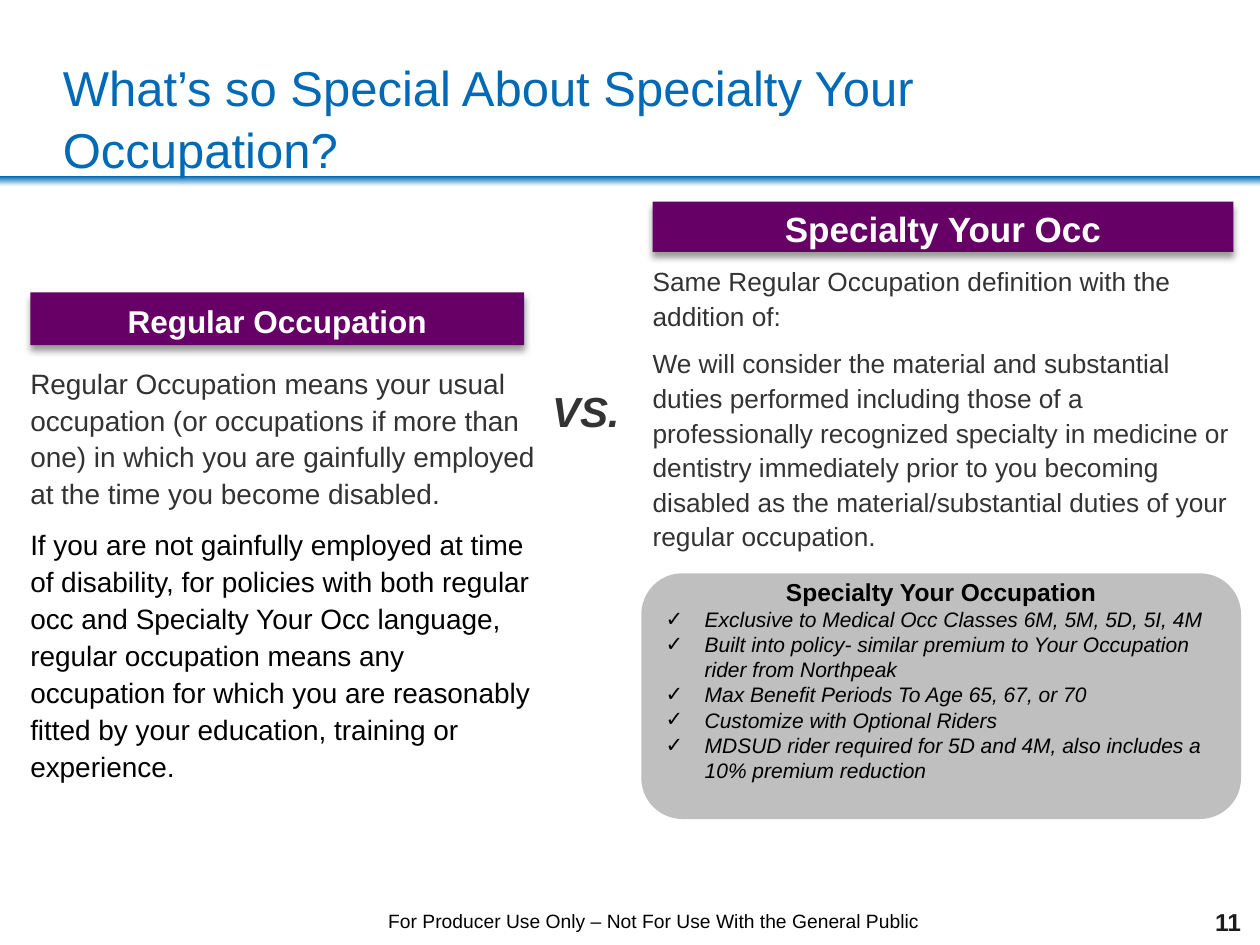
from lxml.etree import SubElement
from pptx import Presentation
from pptx.dml.color import RGBColor
from pptx.enum.shapes import MSO_SHAPE as Preset
from pptx.enum.text import MSO_ANCHOR as Anchor, PP_ALIGN as Align
from pptx.oxml.ns import qn
from pptx.util import Inches, Pt

BLUE = RGBColor(0x00, 0x6A, 0xB6)
PALE_BLUE = RGBColor(0xE7, 0xF1, 0xF8)
PURPLE = RGBColor(0x66, 0x00, 0x66)
GRAY = RGBColor(0xBF, 0xBF, 0xBF)
DARK_GRAY = RGBColor(0x33, 0x33, 0x33)
NEAR_BLACK = RGBColor(0x1C, 0x1C, 0x1C)
BLACK = RGBColor(0x00, 0x00, 0x00)
WHITE = RGBColor(0xFF, 0xFF, 0xFF)


class SlideBuilder:
    font = "Arial"
    body_spacing = 1.1

    def __init__(self, page):
        self.page = page

    def style(self, para, size, color, bold=False, italic=False,
              align=Align.LEFT, spacing=None):
        para.alignment = align
        if spacing:
            para.line_spacing = spacing
        for span in para.runs:
            font = span.font
            font.name, font.size = self.font, Pt(size)
            font.bold, font.italic = bold, italic
            font.color.rgb = color

    def frame(self, shape, anchor=Anchor.TOP, inset=0.0):
        frame = shape.text_frame
        frame.word_wrap = True
        frame.vertical_anchor = anchor
        frame.margin_left = frame.margin_right = Inches(inset)
        frame.margin_top = frame.margin_bottom = Inches(inset / 2)
        return frame

    def shape(self, preset, area):
        shape = self.page.shapes.add_shape(preset, *map(Inches, area))
        shape.shadow.inherit = False
        shape.line.fill.background()
        return shape

    def text(self, area, words, size, color, anchor=Anchor.TOP, inset=0.0, **look):
        box = self.page.shapes.add_textbox(*map(Inches, area))
        frame = self.frame(box, anchor, inset)
        frame.text = words
        self.style(frame.paragraphs[0], size, color, **look)

    def body(self, area, size, passages):
        box = self.page.shapes.add_textbox(*map(Inches, area))
        frame = self.frame(box)
        frame.text = "\n".join(words for words, _ in passages)
        for index, (para, (_, color)) in enumerate(zip(frame.paragraphs, passages)):
            self.style(para, size, color, spacing=self.body_spacing)
            para.space_before = Pt(size / 2 if index else 0)

    def rule(self, area):
        bar = self.shape(Preset.RECTANGLE, area)
        bar.fill.gradient()
        bar.fill.gradient_angle = 270
        for stop, color, position in zip(bar.fill.gradient_stops, (BLUE, PALE_BLUE), (0, 1)):
            stop.color.rgb, stop.position = color, position

    def banner(self, area, words, size):
        bar = self.shape(Preset.RECTANGLE, area)
        bar.fill.solid()
        bar.fill.fore_color.rgb = PURPLE
        effects = bar._element.spPr.find(qn("a:effectLst"))
        shadow = SubElement(effects, qn("a:outerShdw"), blurRad=str(Pt(4)),
                            dist=str(Pt(3)), dir="5400000", rotWithShape="0")
        tint = SubElement(shadow, qn("a:srgbClr"), val="000000")
        SubElement(tint, qn("a:alpha"), val="40000")
        frame = self.frame(bar, Anchor.MIDDLE)
        frame.text = words
        self.style(frame.paragraphs[0], size, WHITE, bold=True,
                   align=Align.CENTER, spacing=self.body_spacing)

    def checklist(self, area, heading, items):
        panel = self.shape(Preset.ROUNDED_RECTANGLE, area)
        panel.fill.solid()
        panel.fill.fore_color.rgb = GRAY
        frame = self.frame(panel, Anchor.MIDDLE, inset=0.1)
        frame.margin_bottom = Inches(0.31)
        frame.text = "\n".join([heading, *items])
        title, *points = frame.paragraphs
        self.style(title, 14, BLACK, bold=True, align=Align.CENTER)
        for para in points:
            props = para._p.get_or_add_pPr()
            props.set("marL", str(Inches(0.31)))
            props.set("indent", str(-Inches(0.31)))
            SubElement(props, qn("a:buFont"), typeface=self.font)
            SubElement(props, qn("a:buChar"), char="✓")
            self.style(para, 12, BLACK, italic=True)


def main():
    deck = Presentation()
    deck.slide_width, deck.slide_height = Inches(10), Inches(7.5)
    slide = SlideBuilder(deck.slides.add_slide(deck.slide_layouts[6]))

    # Title and rule
    slide.rule((0, 1.4, 10, 0.07))
    slide.text((0.5, 0.3, 9, 1.25), "What’s so Special About Specialty Your Occupation?",
               28, BLUE, anchor=Anchor.MIDDLE, spacing=1.05)

    # Regular occupation
    slide.banner((0.24, 2.32, 3.92, 0.42), "Regular Occupation", 18)
    slide.body((0.24, 2.88, 4.08, 3.62), 16, [
        ("Regular Occupation means your usual occupation (or occupations if more than "
         "one) in which you are gainfully employed at the time you become disabled.",
         DARK_GRAY),
        ("If you are not gainfully employed at time of disability, for policies with "
         "both regular occ and Specialty Your Occ language, regular occupation means "
         "any occupation for which you are reasonably fitted by your education, "
         "training or experience.", BLACK),
    ])

    slide.text((4.2, 3.01, 0.9, 0.5), "VS.", 24, DARK_GRAY, inset=0.1,
               bold=True, italic=True, align=Align.CENTER)

    # Specialty occupation
    slide.banner((5.18, 1.6, 4.61, 0.4), "Specialty Your Occ", 20)
    slide.body((5.18, 2.08, 4.67, 2.36), 15, [
        ("Same Regular Occupation definition with the addition of:", DARK_GRAY),
        ("We will consider the material and substantial duties performed including "
         "those of a professionally recognized specialty in medicine or dentistry "
         "immediately prior to you becoming disabled as the material/substantial "
         "duties of your regular occupation.", DARK_GRAY),
    ])
    slide.checklist((5.09, 4.55, 4.76, 1.95), "Specialty Your Occupation", [
        "Exclusive to Medical Occ Classes 6M, 5M, 5D, 5I, 4M",
        "Built into policy- similar premium to Your Occupation rider from Northpeak",
        "Max Benefit Periods To Age 65, 67, or 70",
        "Customize with Optional Riders",
        "MDSUD rider required for 5D and 4M, also includes a 10% premium reduction",
    ])

    # Footer
    slide.text((7.52, 7.1, 2.33, 0.33), "11", 14, NEAR_BLACK, anchor=Anchor.BOTTOM,
               bold=True, align=Align.RIGHT)
    slide.text((2.7, 7.22, 4.98, 0.27),
               "For Producer Use Only – Not For Use With the General Public",
               11, BLACK, align=Align.CENTER)

    deck.save("out.pptx")


if __name__ == "__main__":
    main()
